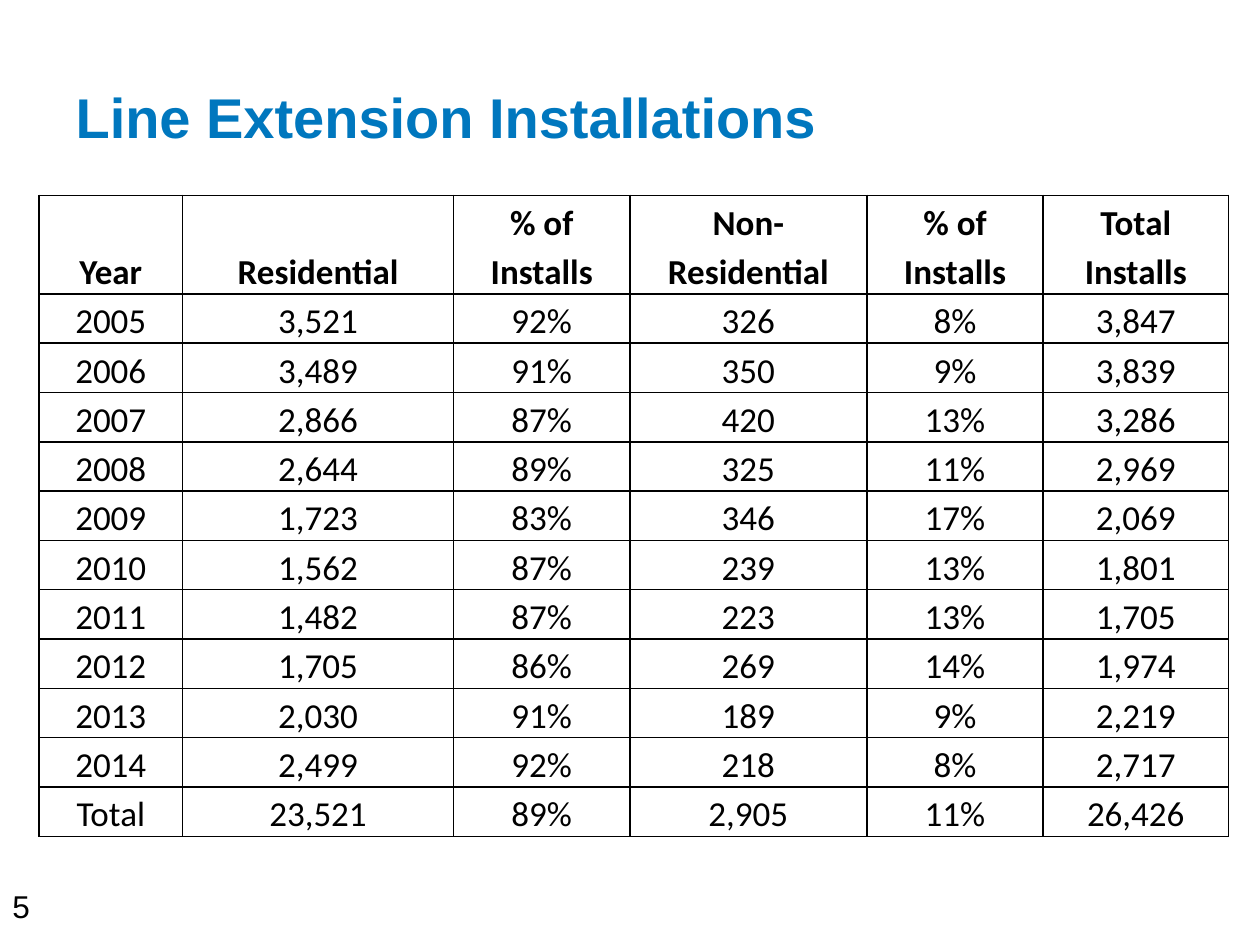
import pptx
import pptx.util
import pptx.dml.color
import pptx.enum.text
import pptx.oxml
import pptx.oxml.ns

Inches = pptx.util.Inches
Pt = pptx.util.Pt
ALIGN = pptx.enum.text.PP_ALIGN
ANCHOR = pptx.enum.text.MSO_ANCHOR
BLUE = pptx.dml.color.RGBColor(0x00, 0x77, 0xBE)
BLACK = pptx.dml.color.RGBColor(0x00, 0x00, 0x00)


def add_run(para, text, font, size, color, bold=False):
    run = para.add_run()
    run.text = text
    run.font.name = font
    run.font.size = Pt(size)
    run.font.bold = bold
    run.font.color.rgb = color


def add_edges(cell):
    props = cell._tc.get_or_add_tcPr()
    for side in ("lnL", "lnR", "lnT", "lnB"):
        props.append(pptx.oxml.parse_xml(
            f'<a:{side} {pptx.oxml.ns.nsdecls("a")} w="{Pt(1)}">'
            f'<a:solidFill><a:srgbClr val="{BLACK}"/></a:solidFill></a:{side}>'))


deck = pptx.Presentation()
deck.slide_width = Inches(10)
deck.slide_height = Inches(7.5)
slide = deck.slides.add_slide(deck.slide_layouts[5])

title = slide.shapes.title
title.left, title.top = Inches(0.5), Inches(0.3)
title.width, title.height = Inches(9), Inches(1.25)
title.text_frame.vertical_anchor = ANCHOR.MIDDLE
para = title.text_frame.paragraphs[0]
para.alignment = ALIGN.LEFT
add_run(para, "Line Extension Installations", "Arial", 32, BLUE, True)

rows = [
    ("Year", "Residential", "% of Installs", "Non-Residential", "% of Installs", "Total Installs"),
    ("2005", "3,521", "92%", "326", "8%", "3,847"),
    ("2006", "3,489", "91%", "350", "9%", "3,839"),
    ("2007", "2,866", "87%", "420", "13%", "3,286"),
    ("2008", "2,644", "89%", "325", "11%", "2,969"),
    ("2009", "1,723", "83%", "346", "17%", "2,069"),
    ("2010", "1,562", "87%", "239", "13%", "1,801"),
    ("2011", "1,482", "87%", "223", "13%", "1,705"),
    ("2012", "1,705", "86%", "269", "14%", "1,974"),
    ("2013", "2,030", "91%", "189", "9%", "2,219"),
    ("2014", "2,499", "92%", "218", "8%", "2,717"),
    ("Total", "23,521", "89%", "2,905", "11%", "26,426"),
]
widths = [1.14, 2.15, 1.4, 1.88, 1.4, 1.47]

table = slide.shapes.add_table(
    len(rows), len(widths), Inches(0.31), Inches(1.55), Inches(9.43), Inches(4.98)).table
table.horz_banding = False
for col, width in zip(table.columns, widths):
    col.width = Inches(width)

for r, row in enumerate(rows):
    table.rows[r].height = Inches(0.75 if r == 0 else 0.38)
    for c, text in enumerate(row):
        cell = table.cell(r, c)
        cell.margin_left = cell.margin_right = Inches(0.07)
        cell.margin_top = cell.margin_bottom = 0
        cell.vertical_anchor = ANCHOR.BOTTOM
        add_edges(cell)
        cell.fill.background()
        para = cell.text_frame.paragraphs[0]
        para.alignment = ALIGN.CENTER
        para.line_spacing = 1.15
        add_run(para, text, "Calibri", 20, BLACK, r == 0)

number = slide.shapes.add_textbox(Inches(0), Inches(6.99), Inches(1.64), Inches(0.4))
number.text_frame.word_wrap = True
add_run(number.text_frame.paragraphs[0], "5", "Arial", 18, BLACK)

deck.save("out.pptx")
